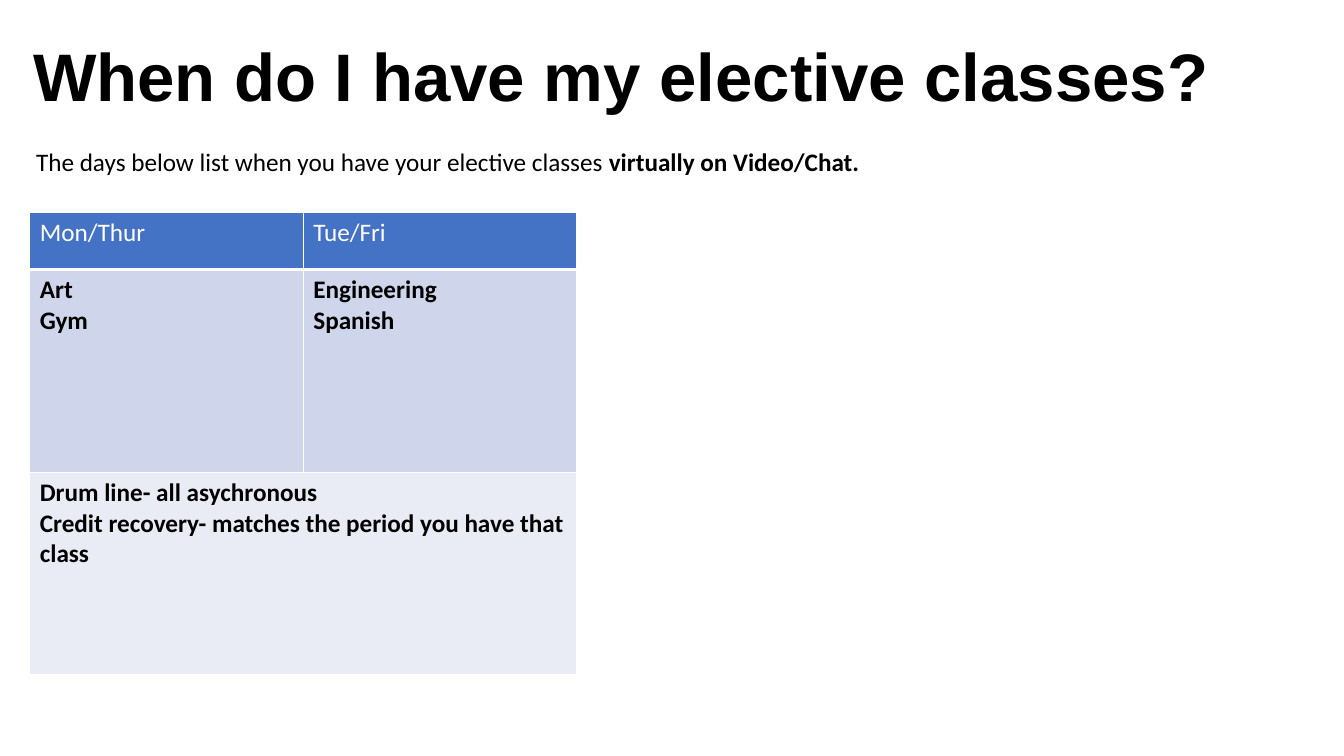
from lxml import etree
from pptx import Presentation
from pptx.dml.color import RGBColor
from pptx.enum.text import MSO_ANCHOR, MSO_AUTO_SIZE, PP_ALIGN
from pptx.oxml.ns import qn
from pptx.util import Cm, Pt

TOP = MSO_ANCHOR.TOP
GROW = MSO_AUTO_SIZE.SHAPE_TO_FIT_TEXT
LEFT = PP_ALIGN.LEFT
BLACK, WHITE = "000000", "FFFFFF"
ROWS = [
    (1.44, "4472C4", WHITE, False, [["Mon/Thur"], ["Tue/Fri"]]),
    (5.11, "CFD5EA", BLACK, True, [["Art", "Gym"], ["Engineering", "Spanish"]]),
    (5.11, "E9EBF5", BLACK, True, [[
        "Drum line- all asychronous",
        "Credit recovery- matches the period you have that class",
    ]]),
]


def rgb(value):
    """Turn a hex string into a colour."""
    return RGBColor.from_string(value)


def add_run(p, text, size=18, color=BLACK, bold=False, font="Calibri"):
    """Add one formatted run to a paragraph."""
    r = p.add_run()
    r.text = text
    r.font.name, r.font.size, r.font.bold = font, Pt(size), bold
    r.font.color.rgb = rgb(color)


def place(sp, box):
    """Move a shape to a box in centimetres and let it fit its text."""
    sp.left, sp.top, sp.width, sp.height = (Cm(v) for v in box)
    tf = sp.text_frame
    tf.word_wrap, tf.auto_size, tf.vertical_anchor = True, GROW, TOP
    p = tf.paragraphs[0]
    p.alignment = LEFT
    return p


def add_title(s, box):
    """Fill the title placeholder."""
    p = place(s.shapes.title, box)
    add_run(p, "When do I have my elective classes?", 48, bold=True, font="Arial")


def add_intro(s, box):
    """Add the sentence above the timetable."""
    p = place(s.shapes.add_textbox(0, 0, 0, 0), box)
    add_run(p, "The days below list when you have your elective classes ")
    add_run(p, "virtually on Video/Chat.", bold=True)


def set_borders(cell, bottom):
    """Give a cell white borders with the given bottom width in points."""
    tc_pr = cell._tc.get_or_add_tcPr()
    for side, width in (("L", 1), ("R", 1), ("T", 1), ("B", bottom)):
        ln = etree.SubElement(tc_pr, qn(f"a:ln{side}"), w=str(Pt(width)))
        fill = etree.SubElement(ln, qn("a:solidFill"))
        etree.SubElement(fill, qn("a:srgbClr"), val=WHITE)


def add_timetable(s, box):
    """Add the table of electives by day."""
    table = s.shapes.add_table(len(ROWS), 2, *(Cm(v) for v in box)).table
    for i, (height, fill, color, bold, texts) in enumerate(ROWS):
        table.rows[i].height = Cm(height)
        for cell in table.rows[i].cells:
            set_borders(cell, 3 if i == 0 else 1)
            cell.fill.solid()
            cell.fill.fore_color.rgb = rgb(fill)
        if len(texts) == 1:
            table.cell(i, 0).merge(table.cell(i, 1))
        for j, lines in enumerate(texts):
            tf = table.cell(i, j).text_frame
            for k, line in enumerate(lines):
                p = tf.add_paragraph() if k else tf.paragraphs[0]
                add_run(p, line, color=color, bold=bold)


def main():
    """Build and save the slide."""
    prs = Presentation()
    prs.slide_width, prs.slide_height = Cm(33.87), Cm(19.05)
    s = prs.slides.add_slide(prs.slide_layouts[5])
    for sp in list(s.placeholders)[1:]:
        sp.element.getparent().remove(sp.element)
    add_title(s, (0.58, 0.74, 33.1, 2.31))
    add_timetable(s, (0.75, 5.35, 13.79, 11.66))
    add_intro(s, (0.66, 3.56, 22.38, 1.03))
    prs.save("out.pptx")


if __name__ == "__main__":
    main()
